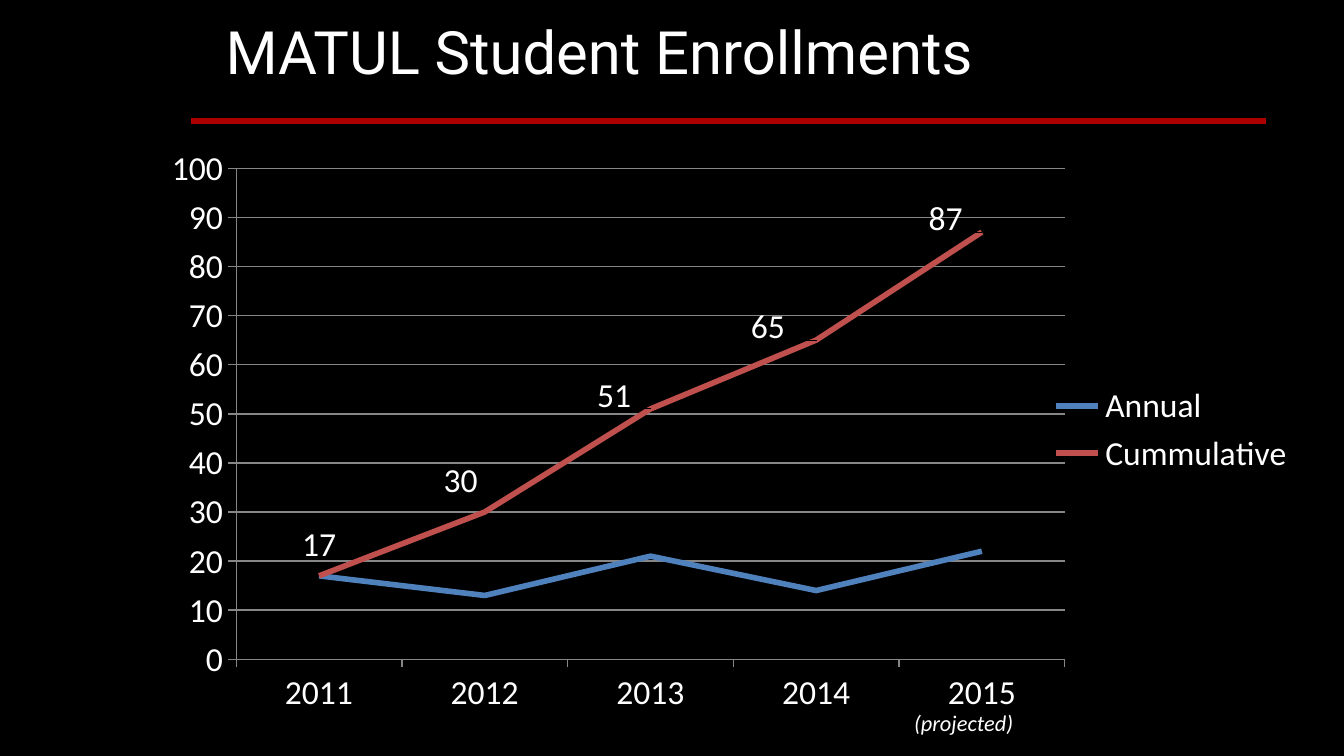
import pptx
import pptx.chart.data
import pptx.dml.color
import pptx.enum.chart
import pptx.enum.shapes
import pptx.enum.text
import pptx.oxml
import pptx.oxml.ns
import pptx.util

qn = pptx.oxml.ns.qn
WIDTH = 10
HEIGHT = WIDTH * 9 / 16
WHITE, GRID = "FFFFFF", "868686"
NO_LEADERS = (
    f'<c:extLst {pptx.oxml.ns.nsdecls("c")}>'
    '<c:ext uri="{CE6537A1-D6FC-4f65-9D91-7224C49458BB}" '
    'xmlns:c15="http://schemas.microsoft.com/office/drawing/2012/chart">'
    '<c15:showLeaderLines val="0"/></c:ext></c:extLst>')


def color(value):
    return pptx.dml.color.RGBColor.from_string(value)


def set_attrs(target, values):
    for name, value in values.items():
        setattr(target, name, value)


def set_line(line, value, width):
    line.color.rgb = color(value)
    line.width = pptx.util.Pt(width)


def manual_layout(**values):
    items = "".join(f'<c:{name} val="{value}"/>' for name, value in values.items())
    return pptx.oxml.parse_xml(
        f'<c:layout {pptx.oxml.ns.nsdecls("c")}><c:manualLayout>{items}'
        "</c:manualLayout></c:layout>")


class Deck:
    def __init__(self):
        self.prs = pptx.Presentation()
        self.prs.slide_width = pptx.util.Inches(WIDTH)
        self.prs.slide_height = pptx.util.Inches(HEIGHT)
        self.s = self.prs.slides.add_slide(self.prs.slide_layouts[6])
        fill = self.s.background.fill
        fill.solid()
        fill.fore_color.rgb = color("000000")

    def place(self, *shares):
        sizes = (self.prs.slide_width, self.prs.slide_height) * 2
        return [round(share * size) for share, size in zip(shares, sizes)]

    def font(self, font, name, size, **extra):
        set_attrs(font, {"name": name, "size": pptx.util.Pt(size), **extra})
        font.color.rgb = color(WHITE)

    def rule(self, *ends):
        sp = self.s.shapes.add_connector(
            pptx.enum.shapes.MSO_CONNECTOR.STRAIGHT, *self.place(*ends))
        set_line(sp.line, "AC0000", 3)
        sp._element.spPr.append(pptx.oxml.parse_xml(
            f'<a:effectLst {pptx.oxml.ns.nsdecls("a")}/>'))

    def text(self, box, words, name, size, align, **extra):
        tf = self.s.shapes.add_textbox(*self.place(*box)).text_frame
        set_attrs(tf, {"word_wrap": True,
                       "vertical_anchor": pptx.enum.text.MSO_ANCHOR.TOP})
        p = tf.paragraphs[0]
        p.alignment = align
        r = p.add_run()
        r.text = words
        self.font(r.font, name, size, **extra)

    def line_chart(self, box, categories, series):
        data = pptx.chart.data.CategoryChartData()
        data.categories = categories
        for name, (values, _) in series.items():
            data.add_series(name, values)
        chart = self.s.shapes.add_chart(
            pptx.enum.chart.XL_CHART_TYPE.LINE, *self.place(*box), data).chart
        set_attrs(chart, {"has_title": False, "has_legend": True})
        self.font(chart.font, "Calibri", 18)
        chart.plots[0].vary_by_categories = False
        for ser in chart.plots[0].series:
            ser.smooth = False
            set_line(ser.format.line, series[ser.name][1], 3)
        for axis in (chart.category_axis, chart.value_axis):
            axis.major_tick_mark = pptx.enum.chart.XL_TICK_MARK.OUTSIDE
            set_line(axis.format.line, GRID, 0.75)
        set_attrs(chart.value_axis, {"minimum_scale": 0, "maximum_scale": 100,
                                     "major_unit": 10, "has_major_gridlines": True})
        set_line(chart.value_axis.major_gridlines.format.line, GRID, 0.75)
        set_attrs(chart.legend, {
            "position": pptx.enum.chart.XL_LEGEND_POSITION.RIGHT,
            "include_in_layout": False})
        self.font(chart.legend.font, "Calibri", 18)
        return chart

    def arrange(self, chart, plot, legend):
        area = chart._chartSpace.find(".//" + qn("c:plotArea"))
        for old in area.findall(qn("c:layout")):
            area.remove(old)
        modes = {"xMode": "edge", "yMode": "edge"}
        area.insert(0, manual_layout(
            layoutTarget="inner", **modes, **dict(zip("xywh", plot))))
        element = chart.legend._element
        for old in element.findall(qn("c:layout")):
            element.remove(old)
        element.find(qn("c:legendPos")).addnext(
            manual_layout(**modes, **dict(zip("xywh", legend))))

    def label_points(self, ser, offsets):
        ser.data_labels.show_value = True
        for index, _ in enumerate(offsets):
            label = ser.points[index].data_label
            self.font(label.font, "Calibri", 18)
            label.position = pptx.enum.chart.XL_LABEL_POSITION.ABOVE
        labels = ser._element.findall(".//" + qn("c:dLbl"))
        for label, (x, y) in zip(labels, offsets):
            label.find(qn("c:idx")).addnext(manual_layout(x=x, y=y))
        ser.data_labels._element.append(pptx.oxml.parse_xml(NO_LEADERS))


def main():
    align = pptx.enum.text.PP_ALIGN
    deck = Deck()
    rule_y = 0.9 / HEIGHT
    deck.rule(0.142, rule_y, 0.942, rule_y)
    deck.text((0.158, 0.06 / HEIGHT, 0.817, 0.74 / HEIGHT),
              "MATUL Student Enrollments", "Roboto", 32, align.LEFT)
    chart = deck.line_chart(
        (0.075, 0.96 / HEIGHT, 0.9, 4.43 / HEIGHT),
        range(2011, 2016),
        {"Annual": ((17, 13, 21, 14, 22), "4F81BD"),
         "Cummulative": ((17, 30, 51, 65, 87), "C0504D")})
    deck.arrange(chart, (0.112, 0.066, 0.685, 0.825), (0.78, 0.42, 0.21, 0.17))
    deck.label_points(chart.plots[0].series[1], [
        (0, -0.01), (-0.02, -0.01), (-0.03, 0.02), (-0.04, 0.02), (-0.03, 0.02)])
    deck.text((0.667, 5.23 / HEIGHT, 0.1, 0.3 / HEIGHT),
              "(projected)", "Calibri", 12, align.CENTER, italic=True)
    deck.prs.save("out.pptx")


if __name__ == "__main__":
    main()
